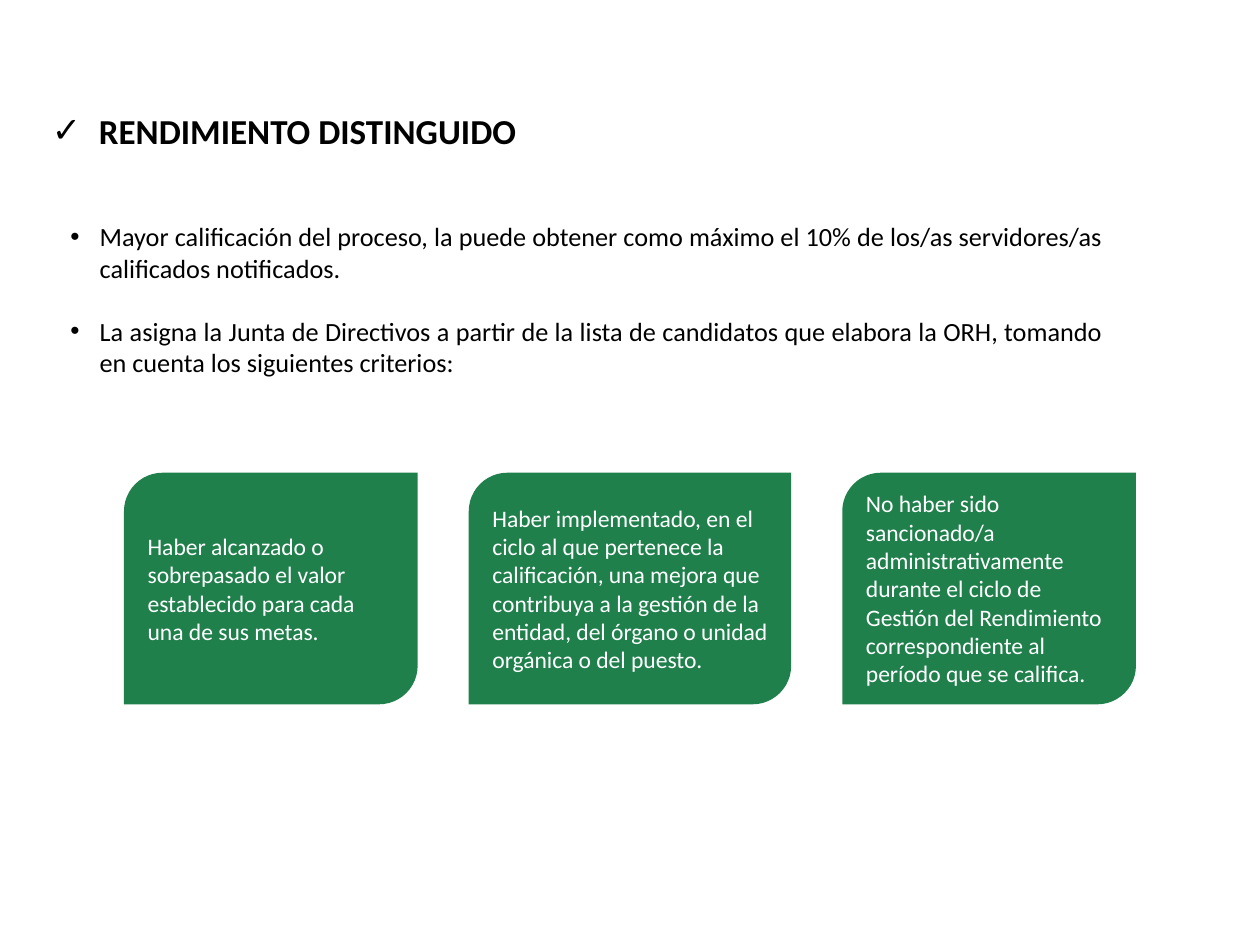
import pptx
import pptx.util
import pptx.dml.color
import pptx.enum.shapes
import pptx.enum.text
import pptx.oxml.ns
from lxml import etree

Cm, Pt = pptx.util.Cm, pptx.util.Pt
ALIGN = pptx.enum.text.PP_ALIGN
ANCHOR = pptx.enum.text.MSO_ANCHOR
COLORS = {"text": "000000", "card": "20804C", "card_text": "FFFFFF"}


def add_bullet(p, char, indent):
    """Give the paragraph a bullet character with a hanging indent."""
    pPr = p._p.get_or_add_pPr()
    pPr.set("marL", str(indent))
    pPr.set("indent", str(-indent))
    font = etree.SubElement(pPr, pptx.oxml.ns.qn("a:buFont"))
    font.set("typeface", "Arial")
    etree.SubElement(pPr, pptx.oxml.ns.qn("a:buChar")).set("char", char)


def format_runs(p, size, color, bold=False):
    for r in p.runs:
        r.font.name = "Calibri"
        r.font.size = Pt(size)
        r.font.bold = bold
        r.font.color.rgb = pptx.dml.color.RGBColor.from_string(COLORS[color])


prs = pptx.Presentation()
prs.slide_width, prs.slide_height = Cm(25.4), Cm(19.05)
s = prs.slides.add_slide(prs.slide_layouts[5])

# Title
title = s.shapes.title
title.left, title.top, title.width, title.height = Cm(0.79), Cm(2.08), Cm(21.23), Cm(1.12)
tf = title.text_frame
tf.text = "RENDIMIENTO DISTINGUIDO"
tf.vertical_anchor = ANCHOR.TOP
tf.auto_size = pptx.enum.text.MSO_AUTO_SIZE.NONE
p = tf.paragraphs[0]
p.alignment = ALIGN.JUSTIFY
add_bullet(p, "✓", Cm(0.95))
format_runs(p, 20, "text", bold=True)

# Bulleted explanation
points = [
    "Mayor calificación del proceso, la puede obtener como máximo el 10% de los/as "
    "servidores/as calificados notificados.",
    "La asigna la Junta de Directivos a partir de la lista de candidatos que elabora "
    "la ORH, tomando en cuenta los siguientes criterios:",
]
tf = s.shapes.add_textbox(Cm(1.17), Cm(4.32), Cm(21.31), Cm(4.11)).text_frame
tf.word_wrap = True
for i, point in enumerate(points):
    p = tf.add_paragraph() if i else tf.paragraphs[0]
    p.text = point
    p.alignment = ALIGN.JUSTIFY
    add_bullet(p, "•", Cm(0.59))
    if i:
        p.space_before = Pt(18)
    format_runs(p, 15, "text")

# Criteria cards, left to right with equal gaps
cards = [
    (5.92, "Haber alcanzado o sobrepasado el valor establecido para cada una de sus metas."),
    (6.5, "Haber implementado, en el ciclo al que pertenece la calificación, una mejora que "
          "contribuya a la gestión de la entidad, del órgano o unidad orgánica o del puesto."),
    (5.92, "No haber sido sancionado/a administrativamente durante el ciclo de Gestión del "
           "Rendimiento correspondiente al período que se califica."),
]
left, gap = 2.5, 1.03
for width, text in cards:
    sp = s.shapes.add_shape(
        pptx.enum.shapes.MSO_SHAPE.ROUND_2_DIAG_RECTANGLE,
        Cm(left), Cm(9.53), Cm(width), Cm(4.67))
    sp.shadow.inherit = False
    sp.fill.solid()
    sp.fill.fore_color.rgb = pptx.dml.color.RGBColor.from_string(COLORS["card"])
    sp.line.fill.background()
    tf = sp.text_frame
    tf.word_wrap = True
    tf.vertical_anchor = ANCHOR.MIDDLE
    tf.text = text
    p = tf.paragraphs[0]
    p.alignment = ALIGN.LEFT
    format_runs(p, 13.5, "card_text")
    left += width + gap

prs.save("out.pptx")
